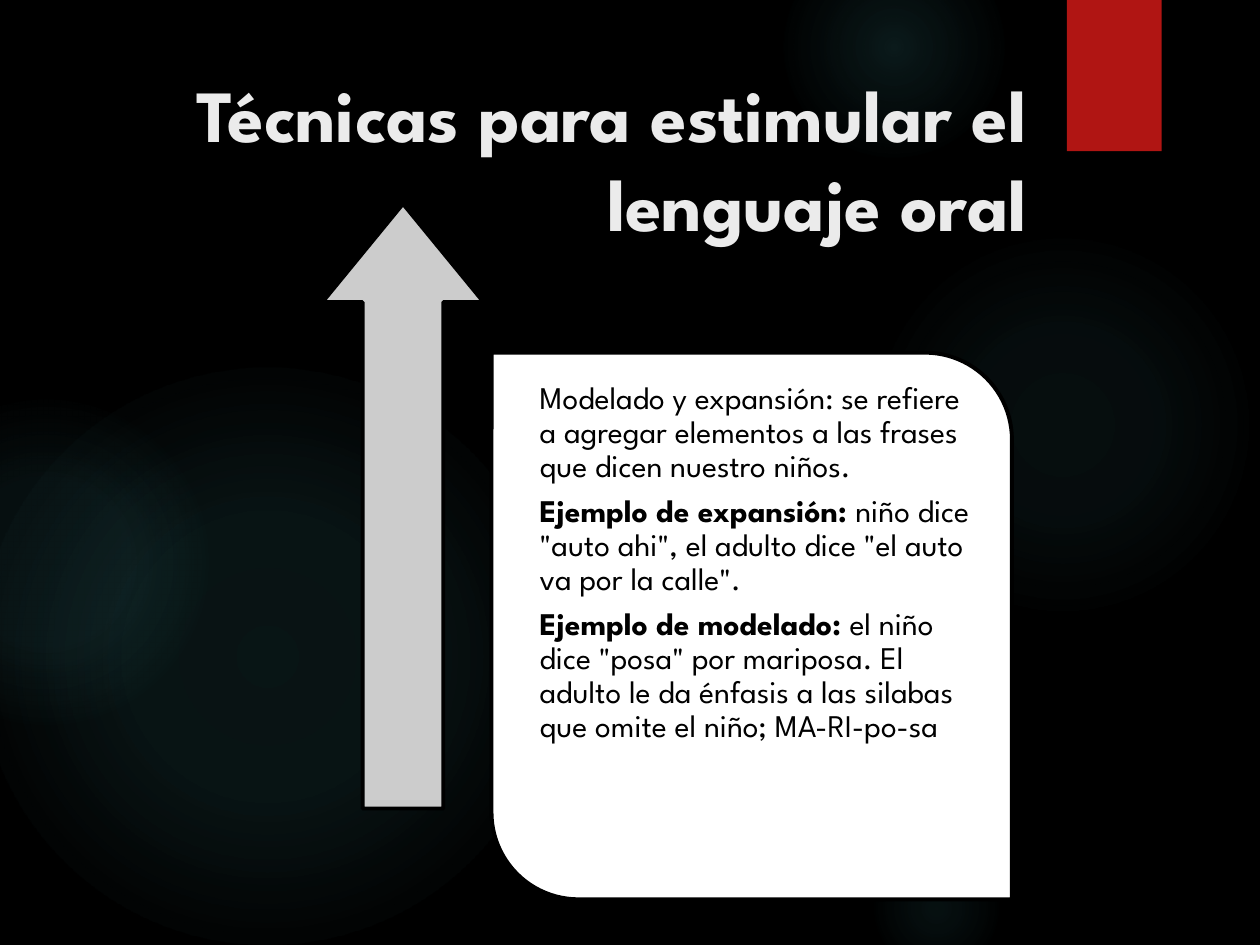
import dataclasses

import pptx
import pptx.dml.color
import pptx.enum.shapes
import pptx.enum.text
import pptx.oxml
import pptx.oxml.ns
import pptx.util

Cm, Pt = pptx.util.Cm, pptx.util.Pt
SHAPE = pptx.enum.shapes.MSO_SHAPE
ALIGN = pptx.enum.text.PP_ALIGN


@dataclasses.dataclass(frozen=True)
class Theme:
    background: str = "000000"
    glow: str = "50B9C1"
    ribbon: str = "B01513"
    title: str = "EBEBEB"
    panel: str = "FFFFFF"
    arrow: str = "CCCCCC"
    ink: str = "000000"
    font: str = "League Spartan"
    title_size: int = 42
    body_size: int = 18
    outline: float = 2.25


THEME = Theme()

TITLE = "Técnicas para estimular el lenguaje oral"
# Each paragraph: bold lead, plain text
BODY = [
    ("", "Modelado y expansión: se refiere a agregar elementos a las frases "
         "que dicen nuestro niños."),
    ("Ejemplo de expansión: ",
     'niño dice "auto ahi", el adulto dice "el auto va por la calle".'),
    ("Ejemplo de modelado: ",
     'el niño dice "posa" por mariposa. El adulto le da énfasis a las silabas '
     "que omite el niño; MA-RI-po-sa"),
]
# Each glow: left, top, diameter in cm, then (position, opacity) stops in percent
GLOWS = [
    (17.5, 4.65, 7.82, [(0, 7), (36, 6), (69, 0)]),
    (15.8, -1.27, 4.45, [(0, 14), (36, 7), (73, 0)]),
    (17.5, 16.94, 2.74, [(0, 9), (36, 5), (66, 0)]),
    (-0.43, 7.42, 11.63, [(0, 11), (36, 10), (75, 0)]),
    (-2.34, 8.05, 6.55, [(0, 8), (36, 8), (72, 0)]),
]


def rgb(color):
    return pptx.dml.color.RGBColor.from_string(color)


def apply(obj, values):
    for name, value in values.items():
        setattr(obj, name, value)


def add_shape(s, kind, box, fill=None, line=None, adjustments=()):
    sp = s.shapes.add_shape(kind, *map(Cm, box))
    sp.shadow.inherit = False
    for i, value in enumerate(adjustments):
        sp.adjustments[i] = value
    if fill:
        sp.fill.solid()
        sp.fill.fore_color.rgb = rgb(fill)
    if line:
        sp.line.color.rgb = rgb(line)
        sp.line.width = Pt(THEME.outline)
    else:
        sp.line.fill.background()
    return sp


def add_text(s, box, inset, paragraphs, size, color, paragraph_format):
    tf = s.shapes.add_textbox(*map(Cm, box)).text_frame
    apply(tf, {"word_wrap": True, "margin_left": Cm(inset[0]),
               "margin_right": Cm(inset[0]), "margin_top": Cm(inset[1]),
               "margin_bottom": Cm(inset[1])})
    for i, runs in enumerate(paragraphs):
        p = tf.add_paragraph() if i else tf.paragraphs[0]
        apply(p, paragraph_format)
        for text, bold in runs:
            r = p.add_run()
            r.text = text
            apply(r.font, {"name": THEME.font, "size": Pt(size), "bold": bold})
            r.font.color.rgb = rgb(color)


def add_glow(s, box, stops):
    sp = add_shape(s, SHAPE.OVAL, box)
    stop_xml = "".join(
        f'<a:gs pos="{pos * 1000}"><a:srgbClr val="{THEME.glow}">'
        f'<a:alpha val="{alpha * 1000}"/></a:srgbClr></a:gs>'
        for pos, alpha in stops)
    gradient = pptx.oxml.parse_xml(
        f'<a:gradFill {pptx.oxml.ns.nsdecls("a")} rotWithShape="1">'
        f'<a:gsLst>{stop_xml}</a:gsLst><a:path path="circle">'
        '<a:fillToRect l="50000" t="50000" r="50000" b="50000"/>'
        '</a:path></a:gradFill>')
    sp.element.spPr.insert(2, gradient)  # after the transform and geometry


def add_backdrop(s):
    s.background.fill.solid()
    s.background.fill.fore_color.rgb = rgb(THEME.background)
    for left, top, size, stops in GLOWS:
        add_glow(s, (left, top, size, size), stops)
    add_shape(s, SHAPE.RECTANGLE, (21.51, 0, 1.91, 3.05), THEME.ribbon)


def add_title(s, box):
    add_text(s, box, (0.25, 0.13), [[(TITLE, True)]], THEME.title_size,
             THEME.title, {"alignment": ALIGN.RIGHT})


def add_panel(s, box):
    left, top, width, height = box
    add_shape(s, SHAPE.ROUND_2_DIAG_RECTANGLE, box, THEME.panel, THEME.ink,
              (0, 0.167))
    paragraphs = [[(text, bold) for text, bold in ((lead, True), (rest, False))
                   if text] for lead, rest in BODY]
    add_text(s, (left + 0.79, top + 0.41, width - 1.4, height - 1.67),
             (0.18, 0.18), paragraphs, THEME.body_size, THEME.ink,
             {"alignment": ALIGN.LEFT, "line_spacing": 0.9,
              "space_after": Pt(6.3)})


def add_arrow(s, box):
    add_shape(s, SHAPE.UP_ARROW, box, THEME.arrow, THEME.ink, (0.5, 0.61))


def main():
    prs = pptx.Presentation()
    apply(prs, {"slide_width": Cm(25.4), "slide_height": Cm(19.05)})
    s = prs.slides.add_slide(prs.slide_layouts[6])
    add_backdrop(s)
    add_title(s, (1.35, 1.27, 19.6, 3.89))
    add_panel(s, (9.91, 7.11, 10.49, 11.02))
    add_arrow(s, (6.5, 4.11, 3.25, 12.19))
    prs.save("out.pptx")


if __name__ == "__main__":
    main()
